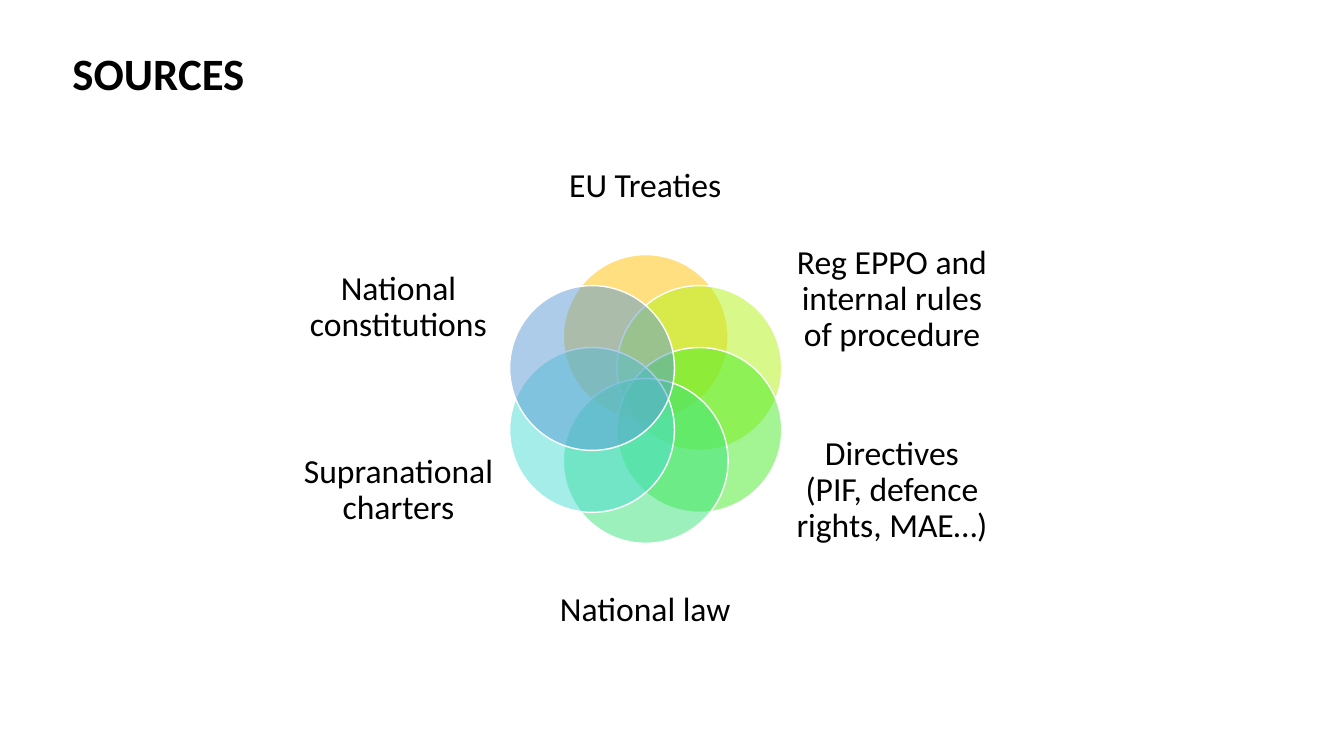
"""Builds the SOURCES slide: six overlapping circles with their labels."""
from math import cos, radians, sin

from lxml import etree
from pptx import Presentation
from pptx.dml.color import RGBColor
from pptx.enum.shapes import MSO_SHAPE
from pptx.enum.text import MSO_ANCHOR, MSO_AUTO_SIZE, PP_ALIGN
from pptx.oxml.ns import qn
from pptx.util import Pt

PX = 9525
FONT = "Calibri"
OVAL = MSO_SHAPE.OVAL
MIDDLE = MSO_ANCHOR.MIDDLE
NO_AUTOFIT = MSO_AUTO_SIZE.NONE
LEFT, CENTER = PP_ALIGN.LEFT, PP_ALIGN.CENTER

BLACK = RGBColor(0x00, 0x00, 0x00)
WHITE = RGBColor(0xFF, 0xFF, 0xFF)
AMBER = RGBColor(0xFF, 0xC0, 0x00)
LIME = RGBColor(0xB2, 0xF5, 0x14)
GREEN = RGBColor(0x46, 0xEC, 0x27)
MINT = RGBColor(0x39, 0xE3, 0x7B)
TURQUOISE = RGBColor(0x4A, 0xDC, 0xD2)
BLUE = RGBColor(0x5B, 0x9B, 0xD5)

RING_X, RING_Y, RING_RADIUS = 615, 380, 59
DIAMETER = 157
SOURCES = [
    ("EU Treaties", AMBER, (516, 124, 197, 108)),
    ("Reg EPPO and internal rules of procedure", LIME, (756, 227, 187, 117)),
    ("Directives (PIF, defence rights, MAE…)", GREEN, (756, 401, 187, 132)),
    ("National law", MINT, (516, 528, 197, 108)),
    ("Supranational charters", TURQUOISE, (286, 401, 187, 132)),
    ("National constitutions", BLUE, (286, 227, 187, 132)),
]


def to_emu(*lengths):
    """Turn px lengths into whole EMU."""
    return [round(length * PX) for length in lengths]


def write_text(shape, text, size, alignment, side_margin=0, bold=False):
    """Write one formatted paragraph, centred vertically in the shape."""
    frame = shape.text_frame
    frame.word_wrap = True
    frame.auto_size = NO_AUTOFIT
    frame.vertical_anchor = MIDDLE
    frame.margin_left = frame.margin_right = side_margin * PX
    frame.margin_top = frame.margin_bottom = 0
    paragraph = frame.paragraphs[0]
    paragraph.text = text
    paragraph.alignment = alignment
    paragraph.line_spacing = 0.9
    paragraph.font.name = FONT
    paragraph.font.size = Pt(size)
    paragraph.font.bold = bold
    paragraph.font.color.rgb = BLACK


def set_title(slide, text):
    """Place and fill the title placeholder."""
    title = slide.shapes.title
    title.left, title.top, title.width, title.height = to_emu(12, 20, 1171, 104)
    write_text(title, text, 32, LEFT, side_margin=57, bold=True)


def add_circle(shapes, angle, color):
    """Add a half-transparent circle on the ring, at degrees clockwise from the top."""
    left = RING_X + RING_RADIUS * sin(radians(angle)) - DIAMETER / 2
    top = RING_Y - RING_RADIUS * cos(radians(angle)) - DIAMETER / 2
    circle = shapes.add_shape(OVAL, *to_emu(left, top, DIAMETER, DIAMETER))
    circle.shadow.inherit = False
    circle.fill.solid()
    circle.fill.fore_color.rgb = color
    circle.line.color.rgb = WHITE
    circle.line.width = Pt(1)
    fill_color = circle._element.spPr.find(qn("a:solidFill"))[0]
    etree.SubElement(fill_color, qn("a:alpha"), val="50000")


def add_label(shapes, text, box):
    """Add a centred label in the given px box."""
    write_text(shapes.add_textbox(*to_emu(*box)), text, 24, CENTER)


def main():
    """Build and save the slide."""
    presentation = Presentation()
    presentation.slide_width, presentation.slide_height = to_emu(1280, 720)
    slide = presentation.slides.add_slide(presentation.slide_layouts[5])
    set_title(slide, "SOURCES")
    diagram = slide.shapes.add_group_shape().shapes
    for index, (text, color, box) in enumerate(SOURCES):
        add_circle(diagram, index * 360 / len(SOURCES), color)
        add_label(diagram, text, box)
    presentation.save("out.pptx")


if __name__ == "__main__":
    main()
